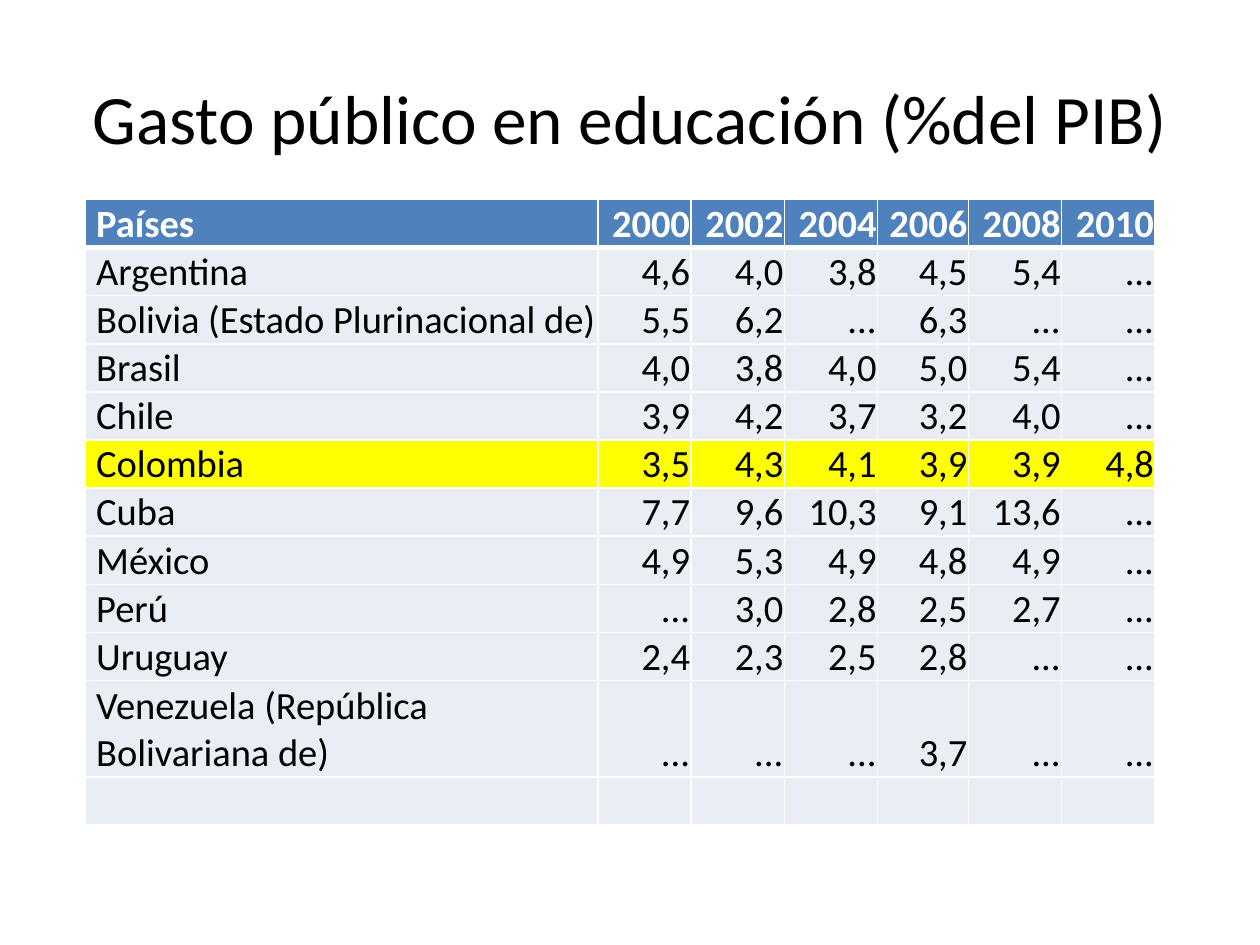
import lxml.etree
import pptx
import pptx.dml.color
import pptx.enum.text
import pptx.oxml.ns
import pptx.util
from pptx.util import Cm

WHITE = pptx.dml.color.RGBColor(0xFF, 0xFF, 0xFF)
BLACK = pptx.dml.color.RGBColor(0x00, 0x00, 0x00)
BLUE = pptx.dml.color.RGBColor(0x4F, 0x81, 0xBD)
PALE_BLUE = pptx.dml.color.RGBColor(0xE9, 0xED, 0xF4)
YELLOW = pptx.dml.color.RGBColor(0xFF, 0xFF, 0x00)

FONT = "Calibri"
HIGHLIGHTED_COUNTRY = "Colombia"
COLUMN_WIDTHS = [10.34, 1.88, 1.88, 1.88, 1.83, 1.88, 1.88]
LINE_HEIGHT = 0.97
TALL_ROW = 10
SPENDING = [
    ["Países", "2000", "2002", "2004", "2006", "2008", "2010"],
    ["Argentina", "4,6", "4,0", "3,8", "4,5", "5,4", "..."],
    ["Bolivia (Estado Plurinacional de)", "5,5", "6,2", "...", "6,3", "...", "..."],
    ["Brasil", "4,0", "3,8", "4,0", "5,0", "5,4", "..."],
    ["Chile", "3,9", "4,2", "3,7", "3,2", "4,0", "..."],
    ["Colombia", "3,5", "4,3", "4,1", "3,9", "3,9", "4,8"],
    ["Cuba", "7,7", "9,6", "10,3", "9,1", "13,6", "..."],
    ["México", "4,9", "5,3", "4,9", "4,8", "4,9", "..."],
    ["Perú", "...", "3,0", "2,8", "2,5", "2,7", "..."],
    ["Uruguay", "2,4", "2,3", "2,5", "2,8", "...", "..."],
    ["Venezuela (República Bolivariana de)", "...", "...", "...", "3,7", "...", "..."],
    [""] * 7,
]


def set_font(paragraph, size, color, bold=False):
    paragraph.font.name = FONT
    paragraph.font.size = pptx.util.Pt(size)
    paragraph.font.color.rgb = color
    paragraph.font.bold = bold


def add_title(slide, left, top, width, height):
    title = slide.shapes.add_textbox(left, top, width, height)
    frame = title.text_frame
    frame.word_wrap = True
    frame.vertical_anchor = pptx.enum.text.MSO_ANCHOR.MIDDLE
    paragraph = frame.paragraphs[0]
    paragraph.text = "Gasto público en educación (%del PIB)"
    paragraph.alignment = pptx.enum.text.PP_ALIGN.CENTER
    set_font(paragraph, 39.6, BLACK)


def set_borders(cell, color, bottom_width):
    properties = cell._tc.get_or_add_tcPr()
    widths = {"a:lnL": 1, "a:lnR": 1, "a:lnT": 1, "a:lnB": bottom_width}
    for tag, width in widths.items():
        line = lxml.etree.SubElement(properties, pptx.oxml.ns.qn(tag), w=str(pptx.util.Pt(width)))
        fill = lxml.etree.SubElement(line, pptx.oxml.ns.qn("a:solidFill"))
        lxml.etree.SubElement(fill, pptx.oxml.ns.qn("a:srgbClr"), val=str(color))


def fill_cell(cell, text, is_header, is_country, fill_color):
    cell.margin_left = Cm(0.23 if is_country else 0.02)
    cell.margin_right = cell.margin_top = Cm(0.02)
    cell.margin_bottom = 0
    cell.vertical_anchor = pptx.enum.text.MSO_ANCHOR.BOTTOM
    set_borders(cell, WHITE, 3 if is_header else 1)
    cell.fill.solid()
    cell.fill.fore_color.rgb = fill_color
    paragraph = cell.text_frame.paragraphs[0]
    if text:
        paragraph.text = text
    if not is_country:
        paragraph.alignment = pptx.enum.text.PP_ALIGN.RIGHT
    set_font(paragraph, 22, WHITE if is_header else BLACK, is_header)


def add_spending_table(slide, left, top, width, height):
    shape = slide.shapes.add_table(len(SPENDING), len(COLUMN_WIDTHS), left, top, width, height)
    table = shape.table
    table.horz_banding = False
    for column, column_width in zip(table.columns, COLUMN_WIDTHS):
        column.width = Cm(column_width)
    for row_index, values in enumerate(SPENDING):
        lines = 2 if row_index == TALL_ROW else 1
        table.rows[row_index].height = Cm(LINE_HEIGHT * lines)
        is_header = row_index == 0
        if is_header:
            fill_color = BLUE
        elif values[0] == HIGHLIGHTED_COUNTRY:
            fill_color = YELLOW
        else:
            fill_color = PALE_BLUE
        for column_index, text in enumerate(values):
            cell = table.cell(row_index, column_index)
            fill_cell(cell, text, is_header, column_index == 0, fill_color)


def main():
    presentation = pptx.Presentation()
    presentation.slide_width = Cm(25.4)
    presentation.slide_height = Cm(19.05)
    slide = presentation.slides.add_slide(presentation.slide_layouts[6])
    add_title(slide, Cm(1.27), Cm(0.76), Cm(22.86), Cm(3.18))
    table_height = Cm(LINE_HEIGHT * (len(SPENDING) + 1))
    add_spending_table(slide, Cm(1.71), Cm(4.02), Cm(sum(COLUMN_WIDTHS)), table_height)
    presentation.save("out.pptx")


if __name__ == "__main__":
    main()
